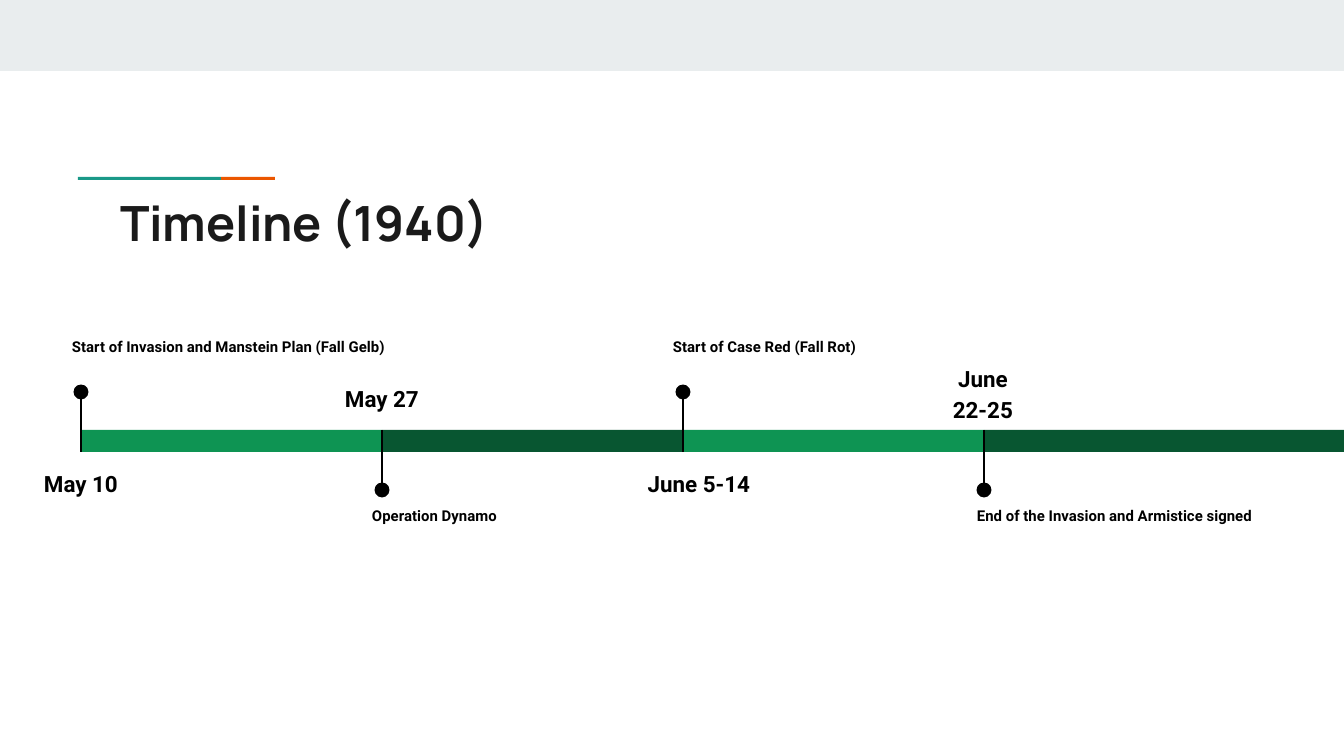
from lxml.etree import SubElement
from pptx import Presentation
from pptx.dml.color import RGBColor
from pptx.enum.shapes import MSO_CONNECTOR, MSO_SHAPE
from pptx.enum.text import MSO_ANCHOR, PP_ALIGN
from pptx.oxml.ns import qn
from pptx.util import Pt

TITLE = "Timeline (1940)"
EVENTS = [
    {"date": "May 10", "date_box": (14, 453, 134), "note": "Start of Invasion and Manstein Plan (Fall Gelb)", "note_left": 59},
    {"date": "May 27", "date_box": (325, 368, 114), "note": "Operation Dynamo", "note_left": 359},
    {"date": "June 5-14", "date_box": (632, 453, 134), "note": "Start of Case Red (Fall Rot)", "note_left": 660},
    {"date": "June 22-25", "date_box": (926, 348, 114), "note": "End of the Invasion and Armistice signed", "note_left": 964},
]
ACCENTS = [(78, 143, "1A9988"), (221, 54, "EB5600")]
BAR_COLORS = ["0E9453", "085631"]
WIDTH, HEIGHT = 1344, 756
START, STEP = 81, 301
BAR_TOP, BAR_HEIGHT = 430, 22
DOT, INSET = 15, 13


def px(length):
    return round(length * 914400 / 134.4)


def color(value):
    return RGBColor.from_string(value)


def add_filled(page, kind, left, top, width, height, fill):
    shape = page.shapes.add_shape(kind, px(left), px(top), px(width), px(height))
    shape.shadow.inherit = False
    shape.fill.solid()
    shape.fill.fore_color.rgb = color(fill)
    shape.line.fill.background()


def add_stem(page, x, top, bottom):
    stem = page.shapes.add_connector(MSO_CONNECTOR.STRAIGHT, px(x), px(top), px(x), px(bottom))
    stem.line.color.rgb = color("000000")
    stem.line.width = Pt(0.75)
    SubElement(stem._element.spPr, qn("a:effectLst"))


def write(box, text, size, font, fill):
    frame = box.text_frame
    frame.word_wrap = True
    frame.vertical_anchor = MSO_ANCHOR.TOP
    frame.margin_left = frame.margin_right = px(INSET)
    frame.margin_top = frame.margin_bottom = px(INSET)
    frame.text = text
    para = frame.paragraphs[0]
    para.alignment = PP_ALIGN.LEFT
    para.font.size = Pt(size)
    para.font.name = font
    para.font.bold = True
    para.font.color.rgb = color(fill)
    return para


def add_label(page, text, left, top, width, height, size):
    box = page.shapes.add_textbox(px(left), px(top), px(width), px(height))
    return write(box, text, size, "Roboto", "000000")


def add_event(page, index, event):
    x = START + index * STEP
    above = index % 2 == 0
    end = WIDTH if index == len(EVENTS) - 1 else x + STEP
    bar_bottom = BAR_TOP + BAR_HEIGHT
    dot_center = 392 if above else 490
    add_filled(page, MSO_SHAPE.RECTANGLE, x, BAR_TOP, end - x, BAR_HEIGHT, BAR_COLORS[index % 2])
    add_stem(page, x, min(dot_center, BAR_TOP), max(dot_center, bar_bottom))
    add_filled(page, MSO_SHAPE.OVAL, x - DOT / 2, dot_center - DOT / 2, DOT, DOT, "000000")
    left, top, width = event["date_box"]
    date = add_label(page, event["date"], left, top, width, 60, 12)
    date.alignment = PP_ALIGN.CENTER
    date.line_spacing = 1.15
    date.space_after = Pt(16)
    add_label(page, event["note"], event["note_left"], 329 if above else 498, 345, 155, 8)


def main():
    deck = Presentation()
    deck.slide_width, deck.slide_height = px(WIDTH), px(HEIGHT)
    page = deck.slides.add_slide(deck.slide_layouts[5])
    add_filled(page, MSO_SHAPE.RECTANGLE, 0, 0, WIDTH, 71, "E9EDEE")
    for left, width, fill in ACCENTS:
        add_filled(page, MSO_SHAPE.RECTANGLE, left, 177, width, 3, fill)
    title = page.shapes.title
    title.left, title.top, title.width, title.height = px(107), px(180), px(1130), px(79)
    write(title, TITLE, 26, "Manrope", "1A1A1A")
    for index, event in enumerate(EVENTS):
        add_event(page, index, event)
    deck.save("out.pptx")


if __name__ == "__main__":
    main()
